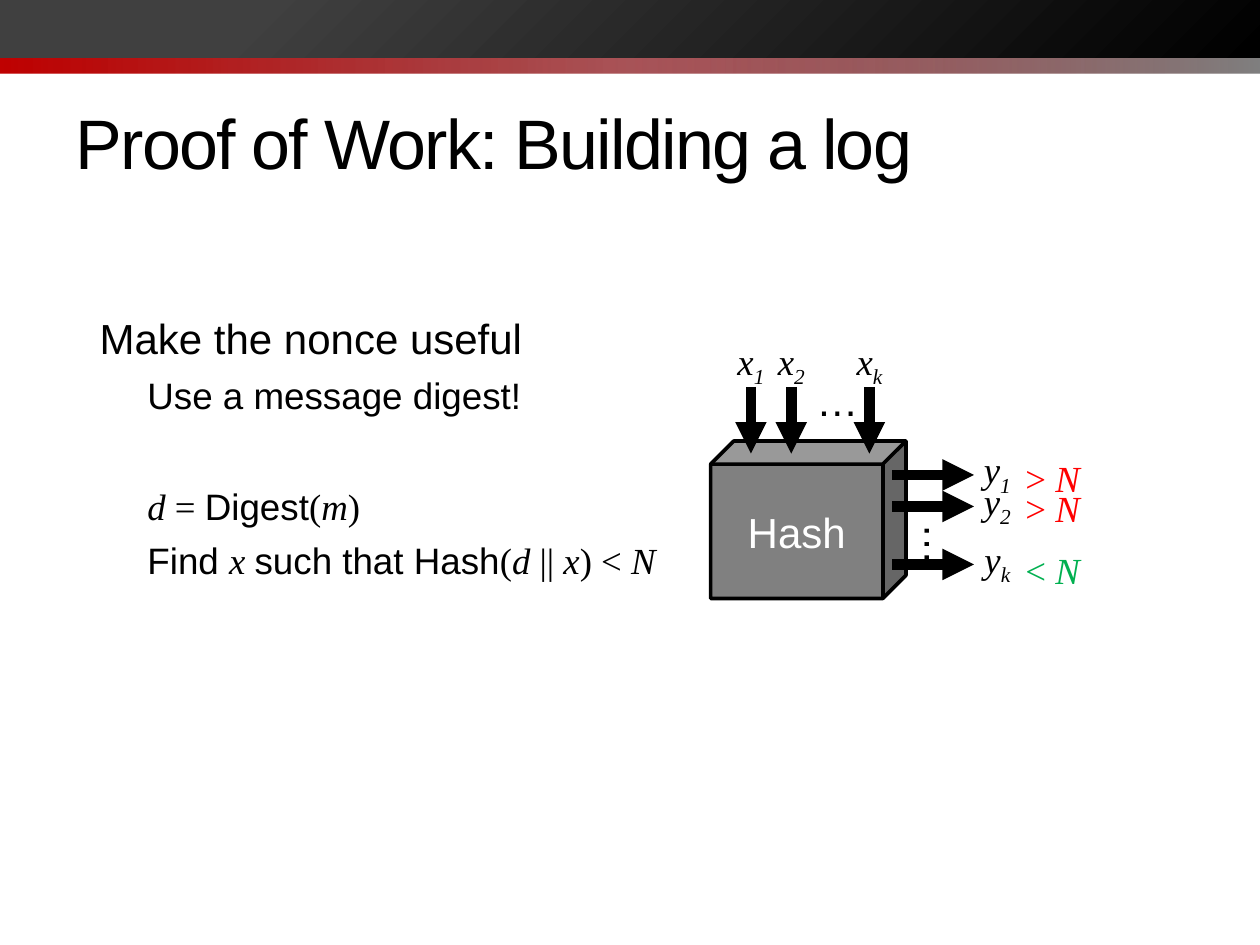
"""Build the slide on proof of work, with a hash box fed by nonces."""
import pptx
import pptx.dml.color
import pptx.enum.shapes
import pptx.enum.text
import pptx.oxml
import pptx.oxml.ns
import pptx.util
import lxml.etree

ARIAL, TIMES = "Arial", "Times New Roman"
SHAPE = pptx.enum.shapes.MSO_SHAPE
ALIGN = pptx.enum.text.PP_ALIGN
MID = pptx.enum.text.MSO_ANCHOR.MIDDLE
FIT = pptx.enum.text.MSO_AUTO_SIZE
qn = pptx.oxml.ns.qn
Pt = pptx.util.Pt


def rgb(code):
    return pptx.dml.color.RGBColor.from_string(code)


def put(par, text, size=21, face=ARIAL, color="000000", slant=False, base=0, track=0):
    run = par.add_run()
    run.text = text
    font = run.font
    font.size, font.name, font.italic = Pt(size), face, slant
    font.color.rgb = rgb(color)
    props = run._r.get_or_add_rPr()
    if base:
        props.set("baseline", str(base * 1000))
    if track:
        props.set("spc", str(track * 100))


deck = pptx.Presentation()
deck.slide_width, deck.slide_height = pptx.util.Inches(10), pptx.util.Inches(7.5)
col = row = deck.slide_width // 100
slide = deck.slides.add_slide(deck.slide_layouts[1])
shapes = slide.shapes
slide.background.fill.solid()
slide.background.fill.fore_color.rgb = rgb("FFFFFF")

bars = [
    (2.4, 3.4, 0, [(0, "C00000", 100), (50, "7F0007", 67), (100, "808080", 100)]),
    (0, 4.6, 225, [(0, "000000", 100), (80, "404040", 100), (100, "404040", 100)]),
]
for step, (top, high, angle, stops) in enumerate(bars):
    bar = shapes.add_shape(SHAPE.RECTANGLE, 0, int(top * row), 100 * col, int(high * row))
    bar.shadow.inherit = False
    bar.line.fill.background()
    bar.fill.gradient()
    grad = bar._element.spPr.find(qn("a:gradFill"))
    marks = grad.find(qn("a:gsLst"))
    for old in list(marks):
        marks.remove(old)
    for place, code, alpha in stops:
        stop = lxml.etree.SubElement(marks, qn("a:gs"), pos=str(place * 1000))
        tint = lxml.etree.SubElement(stop, qn("a:srgbClr"), val=code)
        if alpha < 100:
            lxml.etree.SubElement(tint, qn("a:alpha"), val=str(alpha * 1000))
    grad.find(qn("a:lin")).set("ang", str(angle * 60000))
    shapes._spTree.insert(2 + step, bar._element)

title, body = shapes.title, slide.placeholders[1]
for holder, spot in [(title, (5, 5.8, 90, 10.8)), (body, (6.9, 24.3, 86.2, 35.7))]:
    holder.left, holder.top, holder.width, holder.height = [int(n * col) for n in spot]
    holder.text_frame.auto_size = FIT.NONE
title.text_frame.vertical_anchor = MID
head = title.text_frame.paragraphs[0]
head.alignment = ALIGN.LEFT
put(head, "Proof of Work: Building a log", size=40, track=-1)

math = {"face": TIMES}
var = {"face": TIMES, "slant": True}
lines = [
    (0, 4, [("Make the nonce useful", {"size": 24})]),
    (1, 5.5, [("Use a message digest!", {})]),
    (1, 38.5, [("d", var), (" = ", math), ("Digest", {}), ("(", math), ("m", var), (")", math)]),
    (1, 5.5, [("Find ", {}), ("x ", var), ("such that Hash", {}), ("(", math), ("d", var),
              (" || ", math), ("x", var), (") < ", math), ("N", var)]),
]
for rank, (level, gap, runs) in enumerate(lines):
    par = body.text_frame.add_paragraph() if rank else body.text_frame.paragraphs[0]
    par.level, par.space_before = level, Pt(gap)
    props = par._p.get_or_add_pPr()
    props.set("marL", str(int(3.8 * col * level)))
    props.set("indent", "0")
    lxml.etree.SubElement(props, qn("a:buNone"))
    for text, form in runs:
        put(par, text, **form)

cube = shapes.add_shape(SHAPE.CUBE, *[int(n * col) for n in (56.4, 35, 15.5, 12.5)])
cube.adjustments[0] = 0.147
cube.shadow.inherit = False
cube.fill.solid()
cube.fill.fore_color.rgb = rgb("808080")
cube.line.color.rgb = rgb("000000")
cube.line.width = Pt(2.08)
cube.text_frame.vertical_anchor = MID
cube.text_frame.paragraphs[0].alignment = ALIGN.CENTER
put(cube.text_frame.paragraphs[0], "Hash", size=24, color="FFFFFF")

arrows, labels = [], []
for sub, x, y in [("1", 59.6, 37.7), ("2", 62.8, 40.2), ("k", 69, 44.8)]:
    low = {**var, "base": -25}
    arrows += [(x, 30.7, x, 36), (70.8, y, 77.3, y)]
    labels += [((x - 2.5, 26.4, 5, 4.5), 0, True, [("x", var), (sub, low)]),
               ((76.9, y - 2.7, 4.5, 4.5), 0, True, [("y", var), (sub, low)])]
for y, sign, code in [(35.7, "> ", "FF0000"), (38.1, "> ", "FF0000"), (43, "< ", "00B050")]:
    labels.append(((80.4, y, 6.4, 4.5), 0, False,
                   [(sign, {**math, "color": code}), ("N", {**var, "color": code})]))
for x, y, turn in [(63.8, 29.2, 0), (72.8, 40, 90)]:
    labels.append(((x, y, 3.8, 5), turn, True, [("…", {"size": 24})]))

for ends in arrows:
    arrow = shapes.add_connector(pptx.enum.shapes.MSO_CONNECTOR.STRAIGHT,
                                 *[int(n * col) for n in ends])
    arrow.line.color.rgb = rgb("000000")
    arrow.line.width = Pt(6)
    lxml.etree.SubElement(arrow.line._get_or_add_ln(), qn("a:tailEnd"), type="triangle")
    lxml.etree.SubElement(arrow._element.spPr, qn("a:effectLst"))

for spot, turn, wrap, runs in labels:
    label = shapes.add_textbox(*[int(n * col) for n in spot])
    label.rotation = turn
    frame = label.text_frame
    frame.word_wrap, frame.auto_size = wrap, FIT.SHAPE_TO_FIT_TEXT
    frame.paragraphs[0].alignment = ALIGN.CENTER if wrap else ALIGN.LEFT
    for text, form in runs:
        put(frame.paragraphs[0], text, **form)

deck.save("out.pptx")
